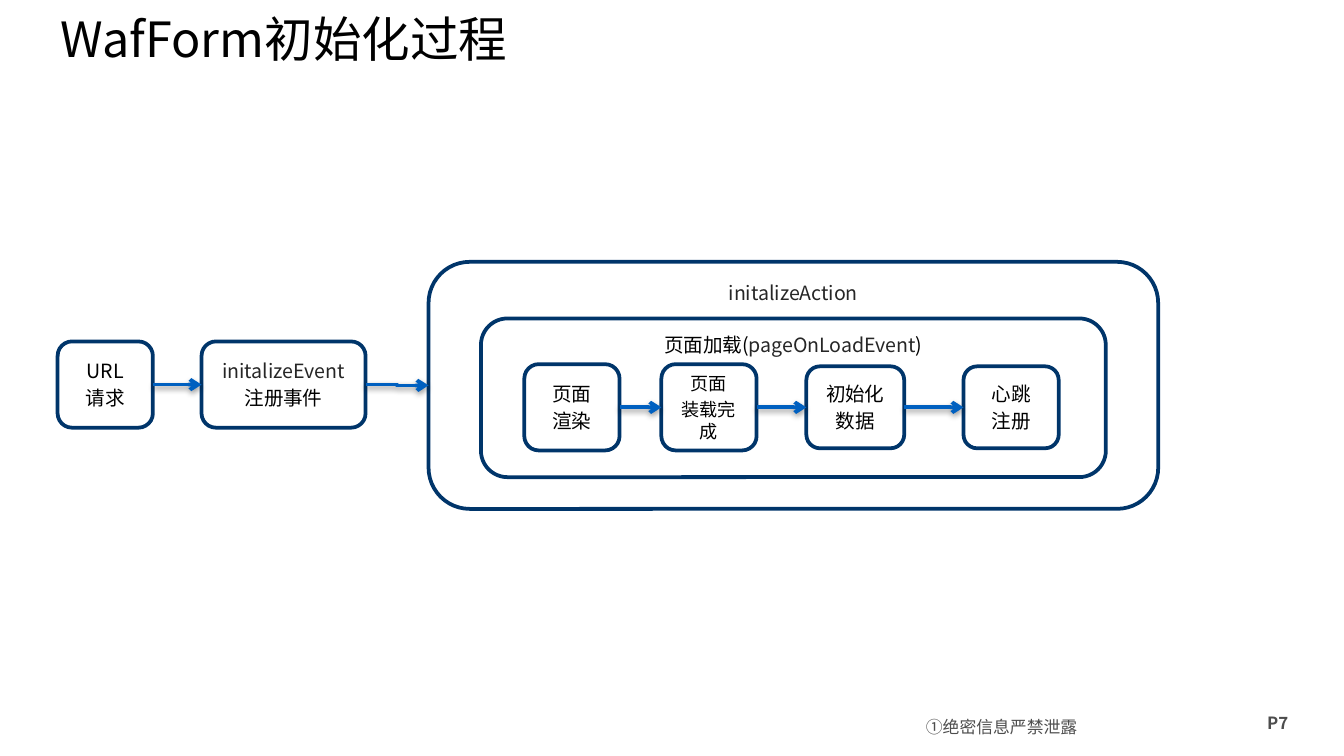
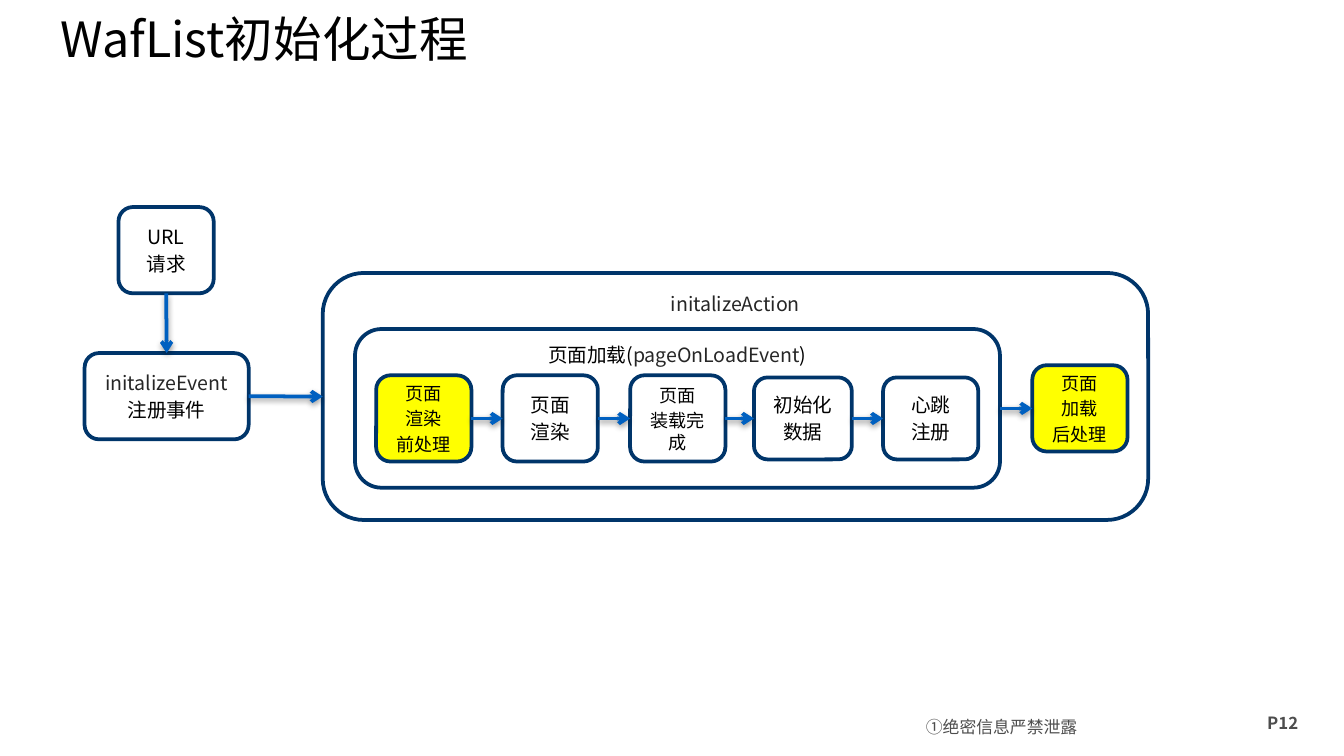
from dataclasses import dataclass
from itertools import pairwise

from lxml import etree
from pptx import Presentation, util as u
from pptx.dml.color import RGBColor
from pptx.enum import shapes, text
from pptx.oxml import ns


@dataclass(frozen=True)
class Theme:
    font: str = "Noto Sans CJK SC"
    ink: str = "000000"
    code: str = "262626"
    footer: str = "4D4D4D"
    paper: str = "FFFFFF"
    highlight: str = "FFFF00"
    border: str = "00356A"
    arrow: str = "0060C0"
    title_size: float = 26
    body_size: float = 10.5
    small_size: float = 9.7
    footer_size: float = 9
    line_width: float = 2


@dataclass(frozen=True)
class Step:
    lines: tuple
    width: float = 1.8
    height: float = 1.63
    small: bool = False
    highlighted: bool = False


CODE_NAMES = {"initalizeAction", "initalizeEvent", "pageOnLoadEvent"}

# Steps that the two processes share
REQUEST = Step(("URL", "请求"))
EVENT = Step(("initalizeEvent", "注册事件"), width=3.1)
PRE_RENDER = Step(("页面", "渲染", "前处理"), small=True, highlighted=True)
RENDER = Step(("页面", "渲染"))
LOADED = Step(("页面", "装载完成"), small=True)
DATA = Step(("初始化", "数据"), width=1.85, height=1.55)
HEARTBEAT = Step(("心跳", "注册"), height=1.55)
POST_LOAD = Step(("页面", "加载", "后处理"), small=True, highlighted=True)

TOP, LEFT, BOTTOM, RIGHT = range(4)


class Deck:
    def __init__(self, theme):
        self.theme = theme
        self.prs = Presentation()
        self.prs.slide_width, self.prs.slide_height = u.Cm(25.4), u.Cm(14.29)
        self.slide = None

    def new_slide(self, title, page):
        t = self.theme
        self.slide = self.prs.slides.add_slide(self.prs.slide_layouts[6])
        # Footer and page number
        notice = self.label("①绝密信息严禁泄露", (17.3, 13.41, 4.5, 0.69),
                            t.footer_size, t.footer, margins=(0.2, 0.03))
        notice.paragraphs[0].alignment = text.PP_ALIGN.JUSTIFY
        notice.paragraphs[0].line_spacing = u.Pt(14)
        number = self.label(f"P{page}", (23.7, 13.34, 1.42, 0.64),
                            t.footer_size, t.footer)
        number.paragraphs[0].runs[0].font.bold = True
        # Title
        heading = self.label(title, (0.89, 0, 19.81, 1.45), t.title_size, t.ink)
        heading.vertical_anchor = text.MSO_ANCHOR.MIDDLE

    def style_run(self, run, size, color):
        run.font.size = u.Pt(size)
        run.font.color.rgb = RGBColor.from_string(color)
        run.font.name = self.theme.font
        east_asian = etree.SubElement(run.font._element, ns.qn("a:ea"))
        east_asian.set("typeface", self.theme.font)

    def label(self, words, box, size, color, margins=(0.25, 0.13)):
        frame = self.slide.shapes.add_textbox(*map(u.Cm, box)).text_frame
        frame.word_wrap = True
        frame.margin_left = frame.margin_right = u.Cm(margins[0])
        frame.margin_top = frame.margin_bottom = u.Cm(margins[1])
        frame.text = words
        self.style_run(frame.paragraphs[0].runs[0], size, color)
        return frame

    def rounded(self, box, lines, size, fill, anchor):
        """Draw a rounded box; each line is a tuple of runs."""
        t = self.theme
        shape = self.slide.shapes.add_shape(
            shapes.MSO_SHAPE.ROUNDED_RECTANGLE, *map(u.Cm, box))
        shape.shadow.inherit = False
        shape.fill.solid()
        shape.fill.fore_color.rgb = RGBColor.from_string(fill)
        shape.line.color.rgb = RGBColor.from_string(t.border)
        shape.line.width = u.Pt(t.line_width)
        frame = shape.text_frame
        frame.word_wrap = True
        frame.vertical_anchor = anchor
        for index, pieces in enumerate(lines):
            paragraph = frame.add_paragraph() if index else frame.paragraphs[0]
            paragraph.alignment = text.PP_ALIGN.CENTER
            if index:
                paragraph.space_before = u.Pt(2)
            for piece in pieces:
                run = paragraph.add_run()
                run.text = piece
                self.style_run(run, size, t.code if piece in CODE_NAMES else t.ink)
        return shape

    def container(self, box, *pieces):
        return self.rounded(box, [pieces], self.theme.body_size,
                            self.theme.paper, text.MSO_ANCHOR.TOP)

    def step(self, step, left, middle):
        t = self.theme
        box = (left, middle - step.height / 2, step.width, step.height)
        return self.rounded(box, [(line,) for line in step.lines],
                            t.small_size if step.small else t.body_size,
                            t.highlight if step.highlighted else t.paper,
                            text.MSO_ANCHOR.MIDDLE)

    def row(self, placed_steps, middle):
        """Draw steps on one middle line and chain them with arrows."""
        drawn = [self.step(step, left, middle) for step, left in placed_steps]
        for before, after in pairwise(drawn):
            self.arrow(before, after)
        return drawn

    def arrow(self, start, end, start_side=RIGHT, end_side=LEFT,
              kind=shapes.MSO_CONNECTOR.STRAIGHT):
        t = self.theme
        link = self.slide.shapes.add_connector(kind, 0, 0, 0, 0)
        link.begin_connect(start, start_side)
        link.end_connect(end, end_side)
        link.line.color.rgb = RGBColor.from_string(t.arrow)
        link.line.width = u.Pt(t.line_width)
        properties = link._element.spPr
        head = etree.SubElement(properties.find(ns.qn("a:ln")), ns.qn("a:tailEnd"))
        head.set("type", "arrow")
        # Soft shadow straight below the line
        effects = etree.SubElement(properties, ns.qn("a:effectLst"))
        shadow = etree.SubElement(effects, ns.qn("a:outerShdw"), blurRad="40000",
                                  dist="20000", dir="5400000", rotWithShape="0")
        black = etree.SubElement(shadow, ns.qn("a:srgbClr"), val="000000")
        etree.SubElement(black, ns.qn("a:alpha"), val="38000")


PAGE_LOAD = ("页面加载(", "pageOnLoadEvent", ")")


def form_process(deck):
    deck.new_slide("WafForm初始化过程", 7)
    action = deck.container((8.1, 4.95, 13.79, 4.67), "initalizeAction")
    deck.container((9.09, 6.02, 11.81, 3), *PAGE_LOAD)
    # Request and event registration
    request = deck.step(REQUEST, 1.09, 7.27)
    event = deck.step(EVENT, 3.81, 7.27)
    for before, after in pairwise((request, event, action)):
        deck.arrow(before, after, kind=shapes.MSO_CONNECTOR.ELBOW)
    # Page loading
    deck.row([(RENDER, 9.91), (LOADED, 12.5), (DATA, 15.24), (HEARTBEAT, 18.21)], 7.7)


def list_process(deck):
    deck.new_slide("WafList初始化过程", 12)
    action = deck.container((6.1, 5.16, 15.6, 4.67), "initalizeAction")
    page_load = deck.container((6.71, 6.22, 12.19, 3), *PAGE_LOAD)
    # Request and event registration
    request = deck.step(REQUEST, 2.24, 4.73)
    event = deck.step(EVENT, 1.6, 7.49)
    deck.arrow(request, event, BOTTOM, TOP)
    deck.arrow(event, action)
    # Page loading
    deck.row([(PRE_RENDER, 7.11), (RENDER, 9.5), (LOADED, 11.91),
              (DATA, 14.25), (HEARTBEAT, 16.69)], 7.91)
    # Handling after the load
    deck.arrow(page_load, deck.step(POST_LOAD, 19.51, 7.72))


def main():
    deck = Deck(Theme())
    form_process(deck)
    list_process(deck)
    deck.prs.save("out.pptx")


if __name__ == "__main__":
    main()
